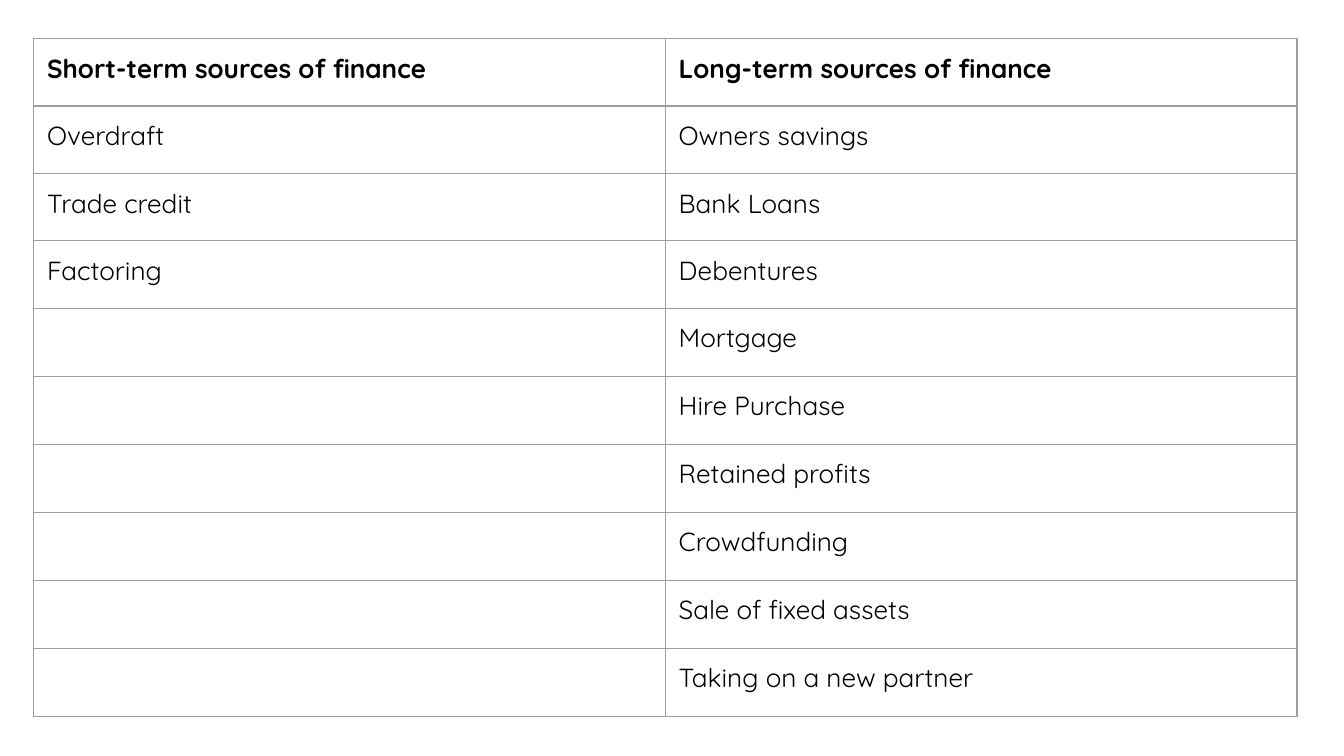
from itertools import zip_longest

from lxml.etree import SubElement
from pptx import Presentation
from pptx.dml.color import RGBColor
from pptx.oxml.ns import qn
from pptx.util import Emu, Pt

PX_PER_INCH = 500
SHORT_TERM = ["Short-term sources of finance", "Overdraft", "Trade credit", "Factoring"]
LONG_TERM = [
    "Long-term sources of finance", "Owners savings", "Bank Loans", "Debentures",
    "Mortgage", "Hire Purchase", "Retained profits", "Crowdfunding",
    "Sale of fixed assets", "Taking on a new partner",
]


def px(length):
    return Emu(round(length * 914400 / PX_PER_INCH))


def color(value):
    return RGBColor.from_string(value)


class FinanceSlide:
    """Holds the table style and the current slide."""

    font_name = "Quicksand"
    font_size = Pt(14)
    text_color = "000000"
    border_color = "9E9E9E"
    border_width = Pt(0.75)
    margin = px(50)

    def __init__(self, deck):
        self.page = deck.slides.add_slide(deck.slide_layouts[6])

    def table(self, left, top, column_width, row_heights, rows):
        columns = len(rows[0])
        frame = self.page.shapes.add_table(
            len(rows), columns, px(left), px(top),
            px(column_width * columns), px(sum(row_heights)))
        table = frame.table
        table.first_row = table.horz_banding = False
        for column in table.columns:
            column.width = px(column_width)
        for index, (row, height) in enumerate(zip(rows, row_heights)):
            table.rows[index].height = px(height)
            for cell, text in zip(table.rows[index].cells, row):
                self.cell(cell, text, bold=index == 0)

    def cell(self, cell, text, bold):
        cell.margin_left = cell.margin_right = self.margin
        cell.margin_top = cell.margin_bottom = self.margin
        self.borders(cell)
        cell.fill.background()
        if text:
            para = cell.text_frame.paragraphs[0]
            para.text = text
            para.font.name = self.font_name
            para.font.size = self.font_size
            para.font.bold = bold
            para.font.color.rgb = color(self.text_color)

    def borders(self, cell):
        properties = cell._tc.get_or_add_tcPr()
        for side in ("a:lnL", "a:lnR", "a:lnT", "a:lnB"):
            line = SubElement(properties, qn(side), w=str(self.border_width))
            fill = SubElement(line, qn("a:solidFill"))
            SubElement(fill, qn("a:srgbClr"), val=self.border_color)


def main():
    deck = Presentation()
    deck.slide_width, deck.slide_height = px(5000), px(2812)
    rows = list(zip_longest(SHORT_TERM, LONG_TERM, fillvalue=""))
    row_heights = [251 if short else 253 for short, _ in rows]
    FinanceSlide(deck).table(125, 143, 2350, row_heights, rows)
    deck.save("out.pptx")


if __name__ == "__main__":
    main()
